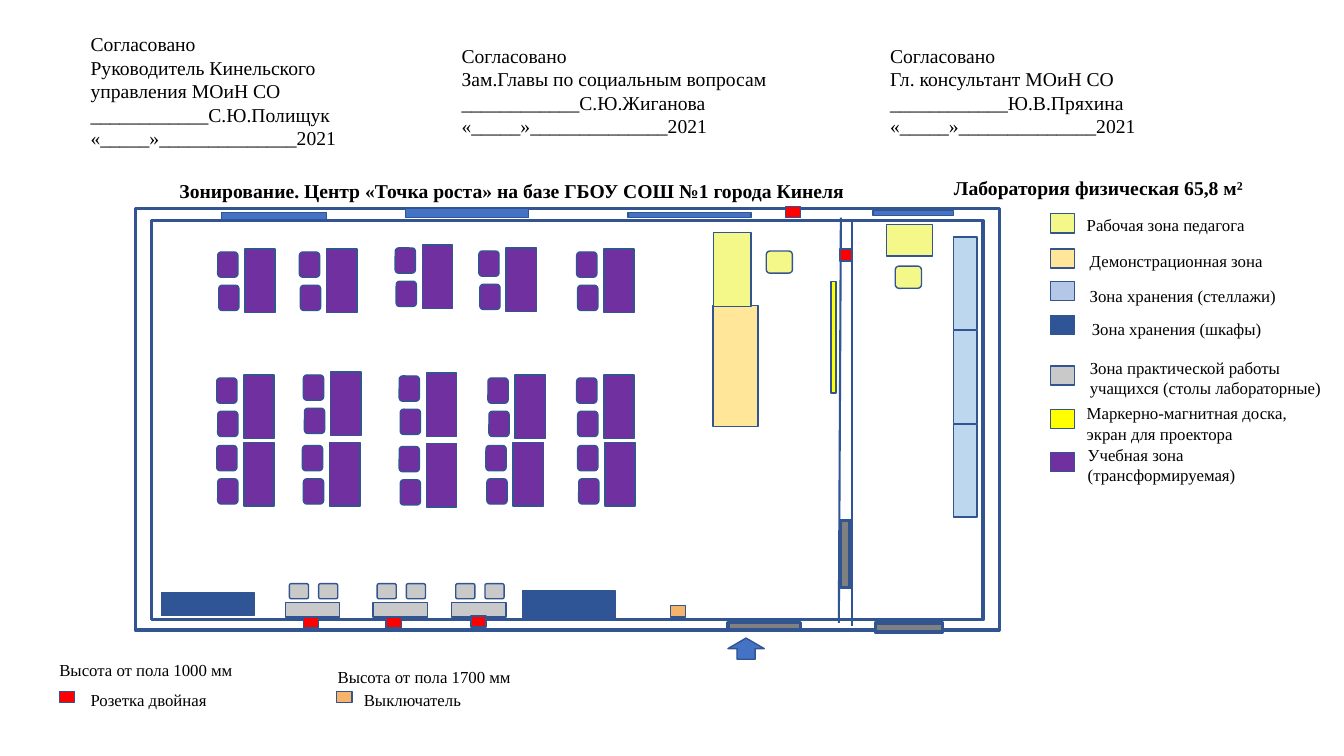
from pptx import Presentation
from pptx.dml.color import RGBColor
from pptx.enum.shapes import MSO_CONNECTOR, MSO_SHAPE
from pptx.enum.text import MSO_ANCHOR, MSO_AUTO_SIZE, PP_ALIGN
from pptx.oxml.ns import qn
from pptx.util import Inches, Pt
from lxml import etree

FONT = "Times New Roman"
OUTLINE, NAVY, BLUE, GREY, RED = "325491", "2F5597", "4472C4", "808080", "FF0000"
PURPLE, SILVER, YELLOW, LEMON = "7030A0", "C9C9C9", "FFFF00", "F3F888"
SAND, ORANGE, SKY, LAVENDER = "FFE699", "F6B36A", "BDD7EE", "B4C7E7"
RECT, ROUND = MSO_SHAPE.RECTANGLE, MSO_SHAPE.ROUNDED_RECTANGLE


def color(value):
    return RGBColor.from_string(value)


def inches(box):
    return [Inches(v) for v in box]


def add_block(s, origin, box, fill=None, kind=RECT, line=OUTLINE, width=1):
    x, y, w, h = box
    sp = s.shapes.add_shape(kind, *inches((origin[0] + x, origin[1] + y, w, h)))
    sp.shadow.inherit = False
    if fill:
        sp.fill.solid()
        sp.fill.fore_color.rgb = color(fill)
    else:
        sp.fill.background()
    sp.line.color.rgb = color(line)
    sp.line.width = Pt(width)
    return sp


def write(sp, lines, size, bold=False, align=PP_ALIGN.LEFT):
    tf = sp.text_frame
    for i, text in enumerate(lines):
        p = tf.paragraphs[0] if i == 0 else tf.add_paragraph()
        p.alignment = align
        r = p.add_run()
        r.text = text
        r.font.name = FONT
        r.font.size = Pt(size)
        r.font.bold = bold
        r.font.color.rgb = color("000000")
    return tf


def add_label(s, box, lines, size=12, wrap=False, **style):
    sp = s.shapes.add_textbox(*inches(box))
    tf = write(sp, lines, size, **style)
    tf.word_wrap = wrap
    tf.auto_size = MSO_AUTO_SIZE.SHAPE_TO_FIT_TEXT


def add_partition(s, origin, start, end):
    x, y = origin
    line = s.shapes.add_connector(
        MSO_CONNECTOR.STRAIGHT,
        *inches((x + start[0], y + start[1], x + end[0], y + end[1])))
    line.line.color.rgb = color(NAVY)
    line.line.width = Pt(1.5)
    etree.SubElement(line._element.spPr, qn("a:effectLst"))


def add_headings(s, box):
    x, y, w, h = box
    title = s.shapes.title
    title.left, title.top, title.width, title.height = inches((x, y + 0.02, 6.85, h))
    tf = write(title, ["Зонирование. Центр «Точка роста» на базе ГБОУ СОШ №1 города Кинеля"],
               14, bold=True)
    tf.word_wrap = False
    tf.auto_size = MSO_AUTO_SIZE.SHAPE_TO_FIT_TEXT
    tf.vertical_anchor = MSO_ANCHOR.TOP
    add_label(s, (x + w - 5.11, y, 5.11, h), ["Лаборатория физическая 65,8 м²"],
              14, wrap=True, bold=True, align=PP_ALIGN.CENTER)


def add_approvals(s, box):
    x, y, _, h = box
    approvals = [
        (0, 3.16, "Руководитель Кинельского управления МОиН СО", "С.Ю.Полищук"),
        (3.68, 3.37, "Зам.Главы по социальным вопросам", "С.Ю.Жиганова"),
        (7.93, 3.67, "Гл. консультант МОиН СО", "Ю.В.Пряхина"),
    ]
    for dx, w, post, name in approvals:
        sp = add_block(s, (x, y), (dx, 0, w, h), "FFFFFF", line="FFFFFF")
        tf = write(sp, ["Согласовано", post, "_" * 12 + name,
                        "«_____»" + "_" * 14 + "2021"], 14)
        tf.word_wrap = True
        tf.vertical_anchor = MSO_ANCHOR.MIDDLE


def add_student_desk(s, origin, x, y):
    add_block(s, origin, (x, y, 0.3, 0.63), PURPLE)
    for dx, dy in ((-0.27, 0.03), (-0.26, 0.36)):
        add_block(s, origin, (x + dx, y + dy, 0.2, 0.25), PURPLE, ROUND)


def add_lab_table(s, origin, x, y):
    add_block(s, origin, (x, y, 0.54, 0.14), SILVER)
    for dx in (0.04, 0.33):
        chair = add_block(s, origin, (x + dx, y - 0.19, 0.19, 0.15), SILVER, ROUND)
        chair.adjustments[0] = 0.126


def add_room(s, box):
    x, y, w, h = box
    origin = (x, y)
    add_block(s, origin, (0, 0, w, h), width=2.25)
    add_block(s, origin, (0.16, 0.12, w - 0.32, h - 0.22), width=2.25)

    windows = [(0.86, 0.04, 1.04, 0.07), (2.68, 0, 1.22, 0.09),
               (4.89, 0.04, 1.22, 0.05), (7.32, 0.02, 0.8, 0.05)]
    for window in windows:
        add_block(s, origin, window, BLUE)
    add_partition(s, origin, (7, 0.09), (6.98, 4.11))
    add_partition(s, origin, (7.11, 0.12), (7.11, 4.14))
    for door in [(5.88, 4.11, 0.72, 0.07), (7.34, 4.11, 0.67, 0.09), (7, 3.09, 0.09, 0.67)]:
        add_block(s, origin, door, GREY, width=2.25)
    add_block(s, origin, (5.88, 4.26, 0.36, 0.21), BLUE, MSO_SHAPE.UP_ARROW)

    furniture = [
        ((6.9, 0.72, 0.05, 1.11), YELLOW, RECT),
        ((5.73, 0.96, 0.45, 1.2), SAND, RECT),
        ((5.74, 0.24, 0.37, 0.73), LEMON, RECT),
        ((6.26, 0.42, 0.26, 0.22), LEMON, ROUND),
        ((7.45, 0.16, 0.46, 0.31), LEMON, RECT),
        ((7.54, 0.57, 0.26, 0.22), LEMON, ROUND),
        ((3.84, 3.79, 0.92, 0.29), NAVY, RECT),
        ((0.26, 3.81, 0.92, 0.23), NAVY, RECT),
        ((5.31, 3.94, 0.15, 0.11), ORANGE, RECT),
    ]
    for place, fill, kind in furniture:
        add_block(s, origin, place, fill, kind)
    for i in range(3):
        add_block(s, origin, (8.12, 0.28 + 0.93 * i, 0.23, 0.92), SKY)

    desks = [
        [(1.09, 0.4), (1.9, 0.4), (2.85, 0.36), (3.68, 0.39), (4.65, 0.4)],
        [(1.08, 1.65), (1.94, 1.62), (2.89, 1.63), (3.77, 1.65), (4.65, 1.65)],
        [(1.08, 2.32), (1.93, 2.32), (2.89, 2.33), (3.75, 2.32), (4.66, 2.32)],
    ]
    for row in desks:
        for dx, dy in row:
            add_student_desk(s, origin, dx, dy)
    for dx in (1.49, 2.36, 3.14):
        add_lab_table(s, origin, dx, 3.91)

    sockets = [(1.67, 4.05), (2.49, 4.05), (3.33, 4.04), (6.45, -0.02)]
    for dx, dy in sockets:
        add_block(s, origin, (dx, dy, 0.15, 0.11), RED)
    add_block(s, origin, (6.99, 0.4, 0.12, 0.12), RED)


def add_zone_legend(s, box):
    x, y, w, _ = box
    zones = [
        (LEMON, 0.04, 0.26, 0, 1.83, ["Рабочая зона педагога"]),
        (SAND, 0.39, 0.29, 0.36, 1.97, ["Демонстрационная зона"]),
        (LAVENDER, 0.71, 0.29, 0.71, 2.07, ["Зона хранения (стеллажи)"]),
        (NAVY, 1.05, 0.31, 1.03, 1.89, ["Зона хранения (шкафы)"]),
        (SILVER, 1.55, 0.29, 1.42, 2.51,
         ["Зона практической работы", "учащихся (столы лабораторные)"]),
        (YELLOW, 1.98, 0.26, 1.87, 2.23, ["Маркерно-магнитная доска,", "экран для проектора"]),
        (PURPLE, 2.41, 0.27, 2.28, 1.7, ["Учебная зона", "(трансформируемая)"]),
    ]
    for fill, key_y, text_x, text_y, text_w, lines in zones:
        add_block(s, (x, y), (0, key_y, 0.24, 0.19), fill)
        add_label(s, (x + text_x, y + text_y, text_w, 0.1 + 0.2 * len(lines)), lines)


def add_height_legend(s, box):
    x, y, _, h = box
    marks = [
        (0, 0, 0.1, 0.31, RED, "Высота от пола 1000 мм", "Розетка двойная", 1.4),
        (2.76, 0.07, 0.09, 0.26, ORANGE, "Высота от пола 1700 мм", "Выключатель", 1.18),
    ]
    for dx, dy, key_x, text_x, fill, height, name, w in marks:
        add_label(s, (x + dx, y + dy, 1.93, 0.3), [height])
        add_block(s, (x + dx, y), (key_x, 0.36, 0.15, 0.11), fill)
        add_label(s, (x + dx + text_x, y + h - 0.3, w, 0.3), [name])


def main():
    prs = Presentation()
    prs.slide_width, prs.slide_height = Inches(13.33), Inches(7.5)
    s = prs.slides.add_slide(prs.slide_layouts[5])
    add_headings(s, (1.68, 1.7, 11.77, 0.34))
    add_room(s, (1.34, 2.07, 8.57, 4.18))
    add_zone_legend(s, (10.42, 2.08, 2.8, 2.78))
    add_height_legend(s, (0.49, 6.5, 4.69, 0.59))
    add_approvals(s, (0.8, 0.27, 11.6, 1.26))
    prs.save("out.pptx")


if __name__ == "__main__":
    main()
